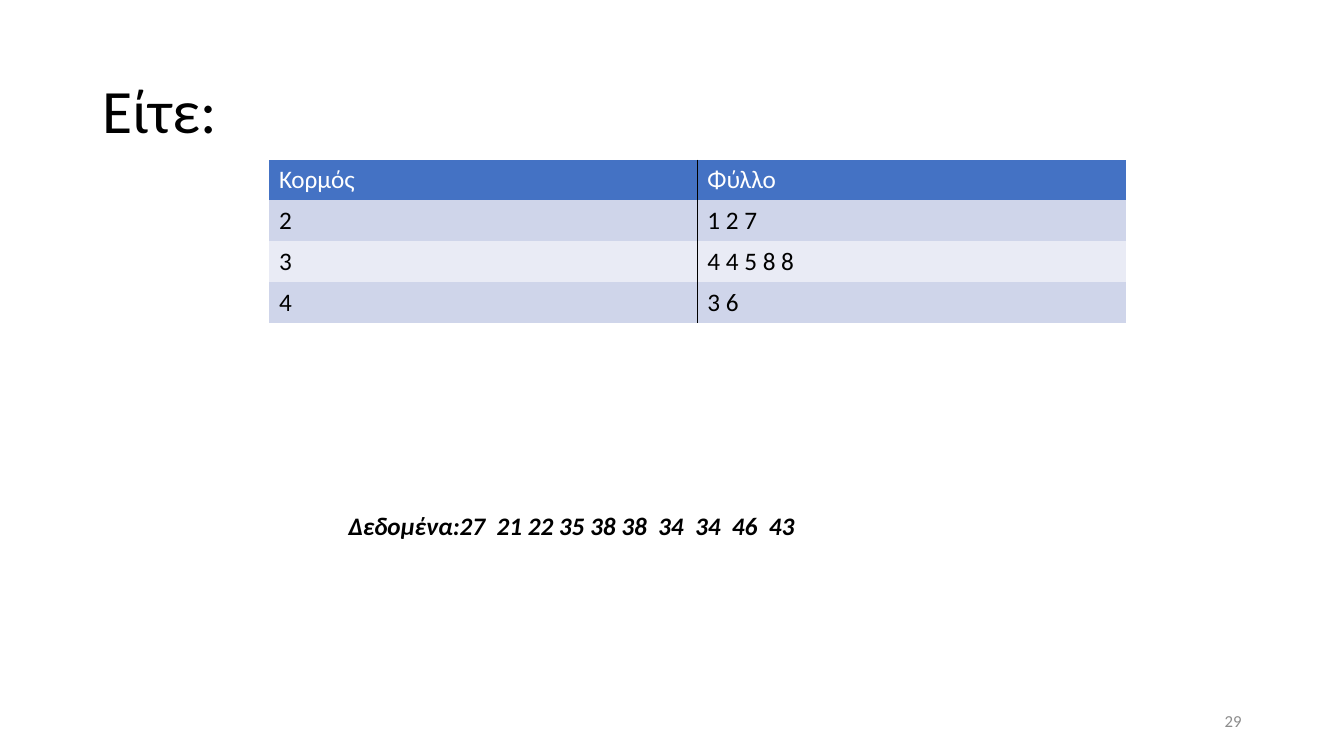
from dataclasses import dataclass

from lxml.etree import SubElement
from pptx import Presentation
from pptx.dml.color import RGBColor
from pptx.enum.text import MSO_ANCHOR, PP_ALIGN
from pptx.oxml import parse_xml
from pptx.oxml.ns import nsdecls, qn
from pptx.slide import Slide
from pptx.table import _Cell
from pptx.text.text import TextFrame
from pptx.util import Cm, Pt


@dataclass(frozen=True)
class Theme:
    font: str = "Calibri"
    ink: str = "000000"
    muted: str = "8C8C8C"
    white: str = "FFFFFF"
    header: str = "4472C4"
    bands: tuple[str, str] = ("CFD5EA", "E9EBF5")
    title: int = 44
    body: int = 18
    number: int = 12


@dataclass(frozen=True)
class Label:
    text: str
    left: float
    top: float
    width: float
    height: float
    size: int
    color: str
    bold: bool = False
    italic: bool = False
    align: PP_ALIGN = PP_ALIGN.LEFT
    anchor: MSO_ANCHOR = MSO_ANCHOR.MIDDLE
    spacing: float = 1.0


THEME = Theme()
NO_GRID_STYLE = "{2D5ABB26-0587-4C30-8999-92F81FD0307C}"
LABELS = [
    Label("Είτε:", 2.33, 1.01, 29.21, 3.68, THEME.title, THEME.ink, spacing=0.9),
    Label("29", 23.92, 17.66, 7.62, 1.01, THEME.number, THEME.muted,
          align=PP_ALIGN.RIGHT),
    Label("Δεδομένα:27  21 22 35 38 38  34  34  46  43", 8.53, 12.73, 12.07, 1.8,
          THEME.body, THEME.ink, bold=True, italic=True, anchor=MSO_ANCHOR.TOP),
]
STEM_LEAF = [("Κορμός", "Φύλλο"), ("2", "1 2 7"), ("3", "4 4 5 8 8"), ("4", "3 6")]


def write(tf: TextFrame, text: str, *, size: int, color: str, bold: bool = False,
          italic: bool = False, align: PP_ALIGN = PP_ALIGN.LEFT,
          spacing: float = 1.0) -> None:
    p = tf.paragraphs[0]
    p.alignment = align
    p.line_spacing = spacing
    r = p.add_run()
    r.text = text
    r.font.name = THEME.font
    r.font.size = Pt(size)
    r.font.bold = bold
    r.font.italic = italic
    r.font.color.rgb = RGBColor.from_string(color)


def add_label(s: Slide, label: Label) -> None:
    sp = s.shapes.add_textbox(Cm(label.left), Cm(label.top),
                              Cm(label.width), Cm(label.height))
    tf = sp.text_frame
    tf.word_wrap = True
    tf.vertical_anchor = label.anchor
    write(tf, label.text, size=label.size, color=label.color, bold=label.bold,
          italic=label.italic, align=label.align, spacing=label.spacing)


def add_border(cell: _Cell, side: str) -> None:
    ln = parse_xml(f'<a:{side} {nsdecls("a")} w="{Pt(1)}"/>')
    fill = SubElement(ln, qn("a:solidFill"))
    SubElement(fill, qn("a:srgbClr"), val=THEME.ink)
    cell._tc.get_or_add_tcPr().insert(0, ln)


def add_stem_leaf(s: Slide) -> None:
    rows, cols = len(STEM_LEAF), len(STEM_LEAF[0])
    frame = s.shapes.add_table(rows, cols, Cm(6.78), Cm(4.02),
                               Cm(21.59), Cm(1.03 * rows))
    table = frame.table
    table._tbl.tblPr.find(qn("a:tableStyleId")).text = NO_GRID_STYLE
    for i, row in enumerate(STEM_LEAF):
        fill = THEME.bands[(i - 1) % 2] if i else THEME.header
        for j, text in enumerate(row):
            cell = table.cell(i, j)
            cell.fill.solid()
            cell.fill.fore_color.rgb = RGBColor.from_string(fill)
            add_border(cell, "lnL" if j else "lnR")
            write(cell.text_frame, text, size=THEME.body,
                  color=THEME.ink if i else THEME.white)


def main() -> None:
    prs = Presentation()
    prs.slide_width, prs.slide_height = Cm(33.87), Cm(19.05)
    s = prs.slides.add_slide(prs.slide_layouts[6])
    add_stem_leaf(s)
    for label in LABELS:
        add_label(s, label)
    prs.save("out.pptx")


if __name__ == "__main__":
    main()
